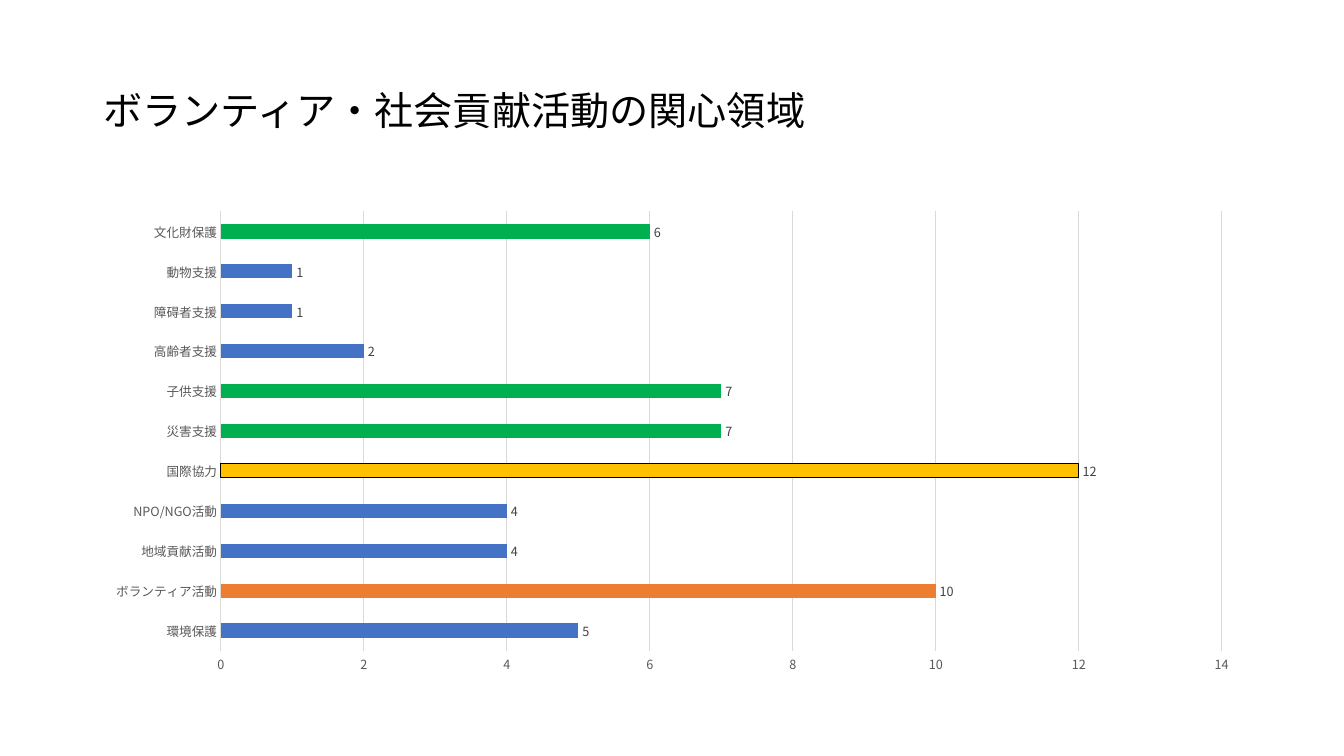
"""Build a slide with a bar chart of interest in volunteer and social activities."""
from lxml import etree
from pptx import Presentation, util as u
from pptx.chart import data as chart_data
from pptx.dml.color import RGBColor
from pptx.enum import chart as ch, text
from pptx.oxml import ns

FONT = "Noto Sans CJK JP"
PX = 914400 / 100.8
BLUE, ORANGE, YELLOW, GREEN = "4472C4", "ED7D31", "FFC000", "00B050"
GREY = "D9D9D9"
INTERESTS = [
    ("環境保護", 5, BLUE),
    ("ボランティア活動", 10, ORANGE),
    ("地域貢献活動", 4, BLUE),
    ("NPO/NGO活動", 4, BLUE),
    ("国際協力", 12, YELLOW),
    ("災害支援", 7, GREEN),
    ("子供支援", 7, GREEN),
    ("高齢者支援", 2, BLUE),
    ("障碍者支援", 1, BLUE),
    ("動物支援", 1, BLUE),
    ("文化財保護", 6, GREEN),
]


def px(length):
    """Turn pixels into EMU."""
    return u.Emu(round(length * PX))


def rgb(value):
    """Turn a hex string into a colour."""
    return RGBColor.from_string(value)


def set_font(font, size, color):
    """Set size, colour and both the Latin and East Asian typeface."""
    font.size, font.name, font.bold = u.Pt(size), FONT, False
    font.color.rgb = rgb(color)
    latin = font._element.find(ns.qn("a:latin"))
    east_asian = etree.Element(ns.qn("a:ea"), typeface=FONT)
    latin.addnext(east_asian)


def set_line(line, color, width=0.75):
    """Give a line a colour and a width in points."""
    line.color.rgb = rgb(color)
    line.width = u.Pt(width)


def add_title(page, wording):
    """Place and format the title."""
    title = page.shapes.title
    title.left, title.top, title.width, title.height = map(px, (93, 40, 1159, 146))
    frame = title.text_frame
    frame.text = wording
    frame.word_wrap = True
    frame.auto_size = text.MSO_AUTO_SIZE.NONE
    frame.vertical_anchor = text.MSO_ANCHOR.MIDDLE
    para = frame.paragraphs[0]
    para.alignment = text.PP_ALIGN.LEFT
    para.line_spacing = 0.9
    set_font(para.font, 28, "000000")


def format_axis(axis):
    """Format the labels of an axis and take away its ticks."""
    axis.major_tick_mark = axis.minor_tick_mark = ch.XL_TICK_MARK.NONE
    set_font(axis.tick_labels.font, 9, "595959")


def format_bars(plot):
    """Colour the bars and show their values."""
    plot.gap_width = 182
    plot.vary_by_categories = False
    series = plot.series[0]
    series.invert_if_negative = False
    series.format.fill.solid()
    series.format.fill.fore_color.rgb = rgb(BLUE)
    for index, (_, _, color) in enumerate(INTERESTS):
        if color != BLUE:
            bar = series.points[index].format
            bar.fill.solid()
            bar.fill.fore_color.rgb = rgb(color)
            if color == YELLOW:
                set_line(bar.line, "000000")
    labels = series.data_labels
    labels.show_value = True
    labels.position = ch.XL_LABEL_POSITION.OUTSIDE_END
    set_font(labels.font, 9, "404040")


def add_interest_chart(page):
    """Add the bar chart of interests."""
    names, values, _ = zip(*INTERESTS)
    data = chart_data.CategoryChartData()
    data.categories = names
    data.add_series("Series 1", values)
    box = map(px, (93, 202, 1159, 480))
    chart = page.shapes.add_chart(ch.XL_CHART_TYPE.BAR_CLUSTERED, *box, data).chart
    chart.has_legend = chart.has_title = False
    set_font(chart.font, 10, "000000")
    format_axis(chart.category_axis)
    set_line(chart.category_axis.format.line, GREY)
    value_axis = chart.value_axis
    format_axis(value_axis)
    value_axis.minimum_scale, value_axis.maximum_scale, value_axis.major_unit = 0, 14, 2
    value_axis.format.line.fill.background()
    set_line(value_axis.major_gridlines.format.line, GREY)
    format_bars(chart.plots[0])


def main():
    """Build and save the deck."""
    deck = Presentation()
    deck.slide_width, deck.slide_height = px(1344), px(756)
    page = deck.slides.add_slide(deck.slide_layouts[5])
    add_title(page, "ボランティア・社会貢献活動の関心領域")
    add_interest_chart(page)
    deck.save("out.pptx")


if __name__ == "__main__":
    main()
